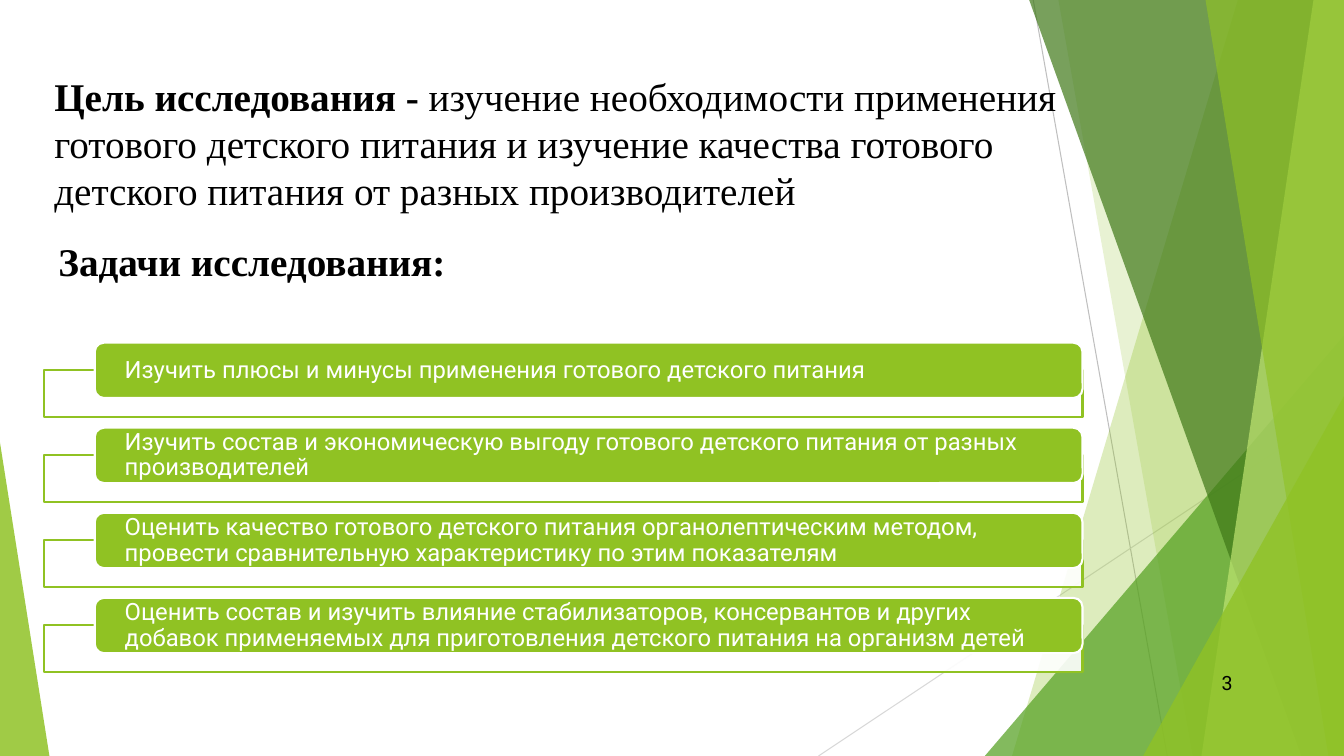
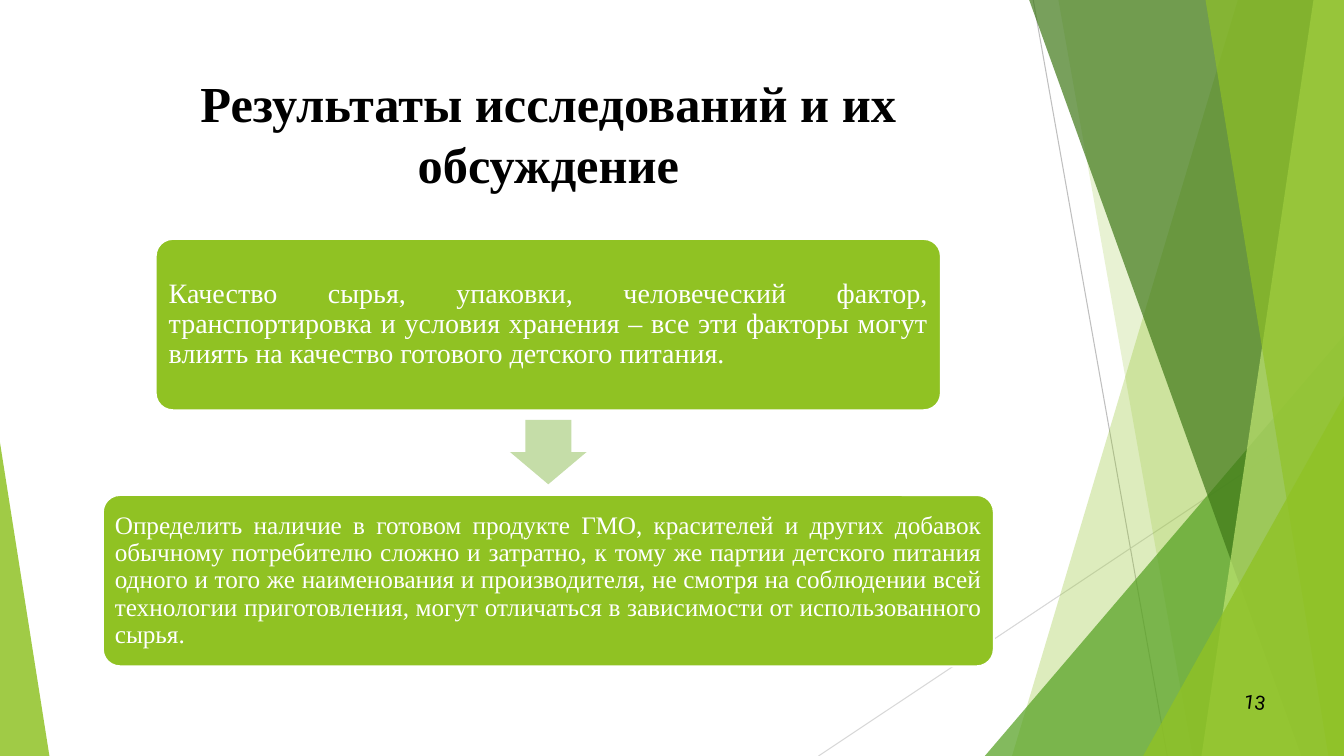
import dataclasses

import lxml.etree
import pptx
import pptx.dml.color
import pptx.enum.shapes
import pptx.enum.text
import pptx.oxml.ns
import pptx.util

PRESET = pptx.enum.shapes.MSO_SHAPE
ALIGN = pptx.enum.text.PP_ALIGN
ANCHOR = pptx.enum.text.MSO_ANCHOR
qn = pptx.oxml.ns.qn


@dataclasses.dataclass(frozen=True)
class Theme:
    serif: str = "Times New Roman"
    sans: str = "Roboto"
    ink: str = "000000"
    paper: str = "FFFFFF"
    lime: str = "90C226"
    card: str = "90C223"
    pale: str = "C5DDA8"
    light: str = "BFE471"
    leaf: str = "54A021"
    forest: str = "3F7818"
    ray: str = "BFBFBF"
    faint_ray: str = "D8D8D8"
    title_size: int = 36
    lead_size: int = 28
    large_size: int = 20
    body_size: int = 18
    task_size: int = 17
    number_size: int = 14
    outline: float = 1.5
    hairline: float = 0.75


def rgb(colour):
    return pptx.dml.color.RGBColor.from_string(colour)


class Deck:
    """Style and current slide; boxes are (left, top, width, height) in percent."""

    def __init__(self, theme):
        self.theme = theme
        self.show = pptx.Presentation()
        self.show.slide_width = pptx.util.Inches(40 / 3)
        self.show.slide_height = pptx.util.Inches(7.5)
        self.slide = None

    def point(self, x, y):
        return (round(self.show.slide_width * x / 100),
                round(self.show.slide_height * y / 100))

    def place(self, box):
        return *self.point(*box[:2]), *self.point(*box[2:])

    def new_slide(self):
        self.slide = self.show.slides.add_slide(self.show.slide_layouts[6])
        self.backdrop()

    def backdrop(self):
        t = self.theme
        self.ray((76.88, 0), (86.85, 100), t.ray)
        self.ray((100, 53.73), (60.9, 100), t.faint_ray)
        self.facet(92.1, 75.3, t.lime, 30)
        self.facet(78.75, 88.73, t.lime, 20)
        self.corner((73.28, 44.4, 26.72, 55.6), 1, t.leaf, 72)
        self.facet(76.58, 96.83, t.forest, 70)
        self.facet(97.73, 89.4, t.light, 70)
        self.facet(89.7, 98.85, t.lime, 65)
        self.corner((85.05, 52.4, 14.95, 47.6), 1, t.lime, 80)
        self.corner((0, 58.53, 3.68, 41.47), 0, t.lime, 85)

    def ray(self, start, end, colour):
        line = self.slide.shapes.add_connector(
            pptx.enum.shapes.MSO_CONNECTOR.STRAIGHT,
            *self.point(*start), *self.point(*end))
        line.line.color.rgb = rgb(colour)
        line.line.width = pptx.util.Pt(self.theme.hairline)
        lxml.etree.SubElement(line.element.spPr, qn("a:effectLst"))

    def facet(self, top_x, bottom_x, colour, opacity):
        """Full-height band from a slanted left edge to the slide's right edge."""
        outline = self.slide.shapes.build_freeform(*self.point(top_x, 0))
        outline.add_line_segments(
            [self.point(100, 0), self.point(100, 100), self.point(bottom_x, 100)])
        self.paint(outline.convert_to_shape(), colour, opacity)

    def corner(self, box, apex, colour, opacity):
        self.shape(PRESET.ISOSCELES_TRIANGLE, box, colour, [apex], opacity)

    def paint(self, shape, fill, opacity=100, line=None):
        shape.shadow.inherit = False
        shape.fill.solid()
        shape.fill.fore_color.rgb = rgb(fill)
        if opacity < 100:
            colour = shape.element.spPr.find(qn("a:solidFill"))[0]
            lxml.etree.SubElement(colour, qn("a:alpha"), val=str(opacity * 1000))
        if line:
            shape.line.color.rgb = rgb(line)
            shape.line.width = pptx.util.Pt(self.theme.outline)
        else:
            shape.line.fill.background()

    def shape(self, preset, box, fill, adjust=(), opacity=100, line=None):
        shape = self.slide.shapes.add_shape(preset, *self.place(box))
        for index, value in enumerate(adjust):
            shape.adjustments[index] = value
        self.paint(shape, fill, opacity, line)
        return shape

    def add_text(self, shape, runs, size, font, colour, insets,
                 align=ALIGN.LEFT, anchor=ANCHOR.TOP, spacing=None):
        """Fill a shape with (text, bold) runs; insets are inches, left to bottom."""
        frame = shape.text_frame
        frame.word_wrap = True
        frame.vertical_anchor = anchor
        (frame.margin_left, frame.margin_top,
         frame.margin_right, frame.margin_bottom) = map(pptx.util.Inches, insets)
        paragraph = frame.paragraphs[0]
        paragraph.alignment = align
        if spacing:
            paragraph.line_spacing = spacing
        for text, bold in runs:
            run = paragraph.add_run()
            run.text = text
            run.font.bold = bold
            run.font.name = font
            run.font.size = pptx.util.Pt(size)
            run.font.color.rgb = rgb(colour)

    def heading(self, box, runs, size, align=ALIGN.LEFT, left_inset=0.1):
        area = self.slide.shapes.add_textbox(*self.place(box))
        self.add_text(area, runs, size, self.theme.serif, self.theme.ink,
                      (left_inset, 0.05, 0.1, 0.05), align)

    def card(self, box, text, size, font, rounding, insets, align=ALIGN.LEFT):
        t = self.theme
        panel = self.shape(PRESET.ROUNDED_RECTANGLE, box, t.card, [rounding],
                           line=t.paper)
        self.add_text(panel, [(text, False)], size, font, t.paper, insets, align,
                      ANCHOR.MIDDLE, 0.9)

    def task_list(self, tasks, top=45.33, pitch=11.25):
        t = self.theme
        for index, task in enumerate(tasks):
            y = top + index * pitch
            self.shape(PRESET.RECTANGLE, (3.3, y + 3.6, 77.25, 6.27), t.paper,
                       opacity=90, line=t.card)
            self.card((7.05, y, 73.5, 7.33), task, t.task_size, t.sans, 0.167,
                      (0.27, 0, 0.27, 0))

    def conclusion(self, axis, top, width, text, size, inset):
        self.card((axis - width / 2, top, width, 22.67), text, size,
                  self.theme.serif, 0.1, [inset] * 4, ALIGN.JUSTIFY)

    def down_arrow(self, axis, top, width, height):
        self.shape(PRESET.DOWN_ARROW, (axis - width / 2, top, width, height),
                   self.theme.pale, [0.6, 0.5])

    def page_number(self, left, top, number, tilt=0):
        area = self.slide.shapes.add_textbox(*self.place((left, top, 7.88, 5.73)))
        area.rotation = tilt
        self.add_text(area, [(number, False)], self.theme.number_size,
                      self.theme.sans, self.theme.ink, [0.1] * 4)


def goal_slide(deck):
    size = deck.theme.lead_size
    deck.new_slide()
    deck.heading((3.3, 8.93, 79.13, 21.87), [
        ("Цель исследования - ", True),
        ("изучение необходимости применения готового детского питания и изучение "
         "качества готового детского питания от разных производителей", False),
    ], size)
    deck.task_list([
        "Изучить плюсы и минусы применения готового детского питания",
        "Изучить состав и экономическую выгоду готового детского питания от разных "
        "производителей",
        "Оценить качество готового детского питания органолептическим методом, "
        "провести сравнительную характеристику по этим показателям",
        "Оценить состав и изучить влияние стабилизаторов, консервантов и других "
        "добавок применяемых для приготовления детского питания на организм детей",
    ])
    deck.heading((2.7, 30.67, 35.18, 7.6), [("Задачи исследования:", True)], size,
                 left_inset=0.22)
    deck.page_number(90.15, 87.47, "3")


def results_slide(deck):
    axis = 40.8
    deck.new_slide()
    deck.heading((axis - 35.25, 8.93, 70.5, 19.2),
                 [("Результаты исследований и их обсуждение", True)],
                 deck.theme.title_size, ALIGN.CENTER)
    deck.conclusion(
        axis, 31.6, 58.43,
        "Качество сырья, упаковки, человеческий фактор, транспортировка и условия "
        "хранения – все эти факторы могут влиять на качество готового детского "
        "питания.", deck.theme.large_size, 0.08)
    deck.down_arrow(axis, 55.53, 5.7, 8.53)
    deck.conclusion(
        axis, 65.47, 66.3,
        "Определить наличие в готовом продукте ГМО, красителей и других добавок "
        "обычному потребителю сложно и затратно, к тому же партии детского питания "
        "одного и того же наименования и производителя, не смотря на соблюдении "
        "всей технологии приготовления, могут отличаться в зависимости от "
        "использованного сырья.", deck.theme.body_size, 0.07)
    deck.page_number(91.8, 90.53, "13", 7.3)


def main():
    deck = Deck(Theme())
    goal_slide(deck)
    results_slide(deck)
    deck.show.save("out.pptx")


if __name__ == "__main__":
    main()
